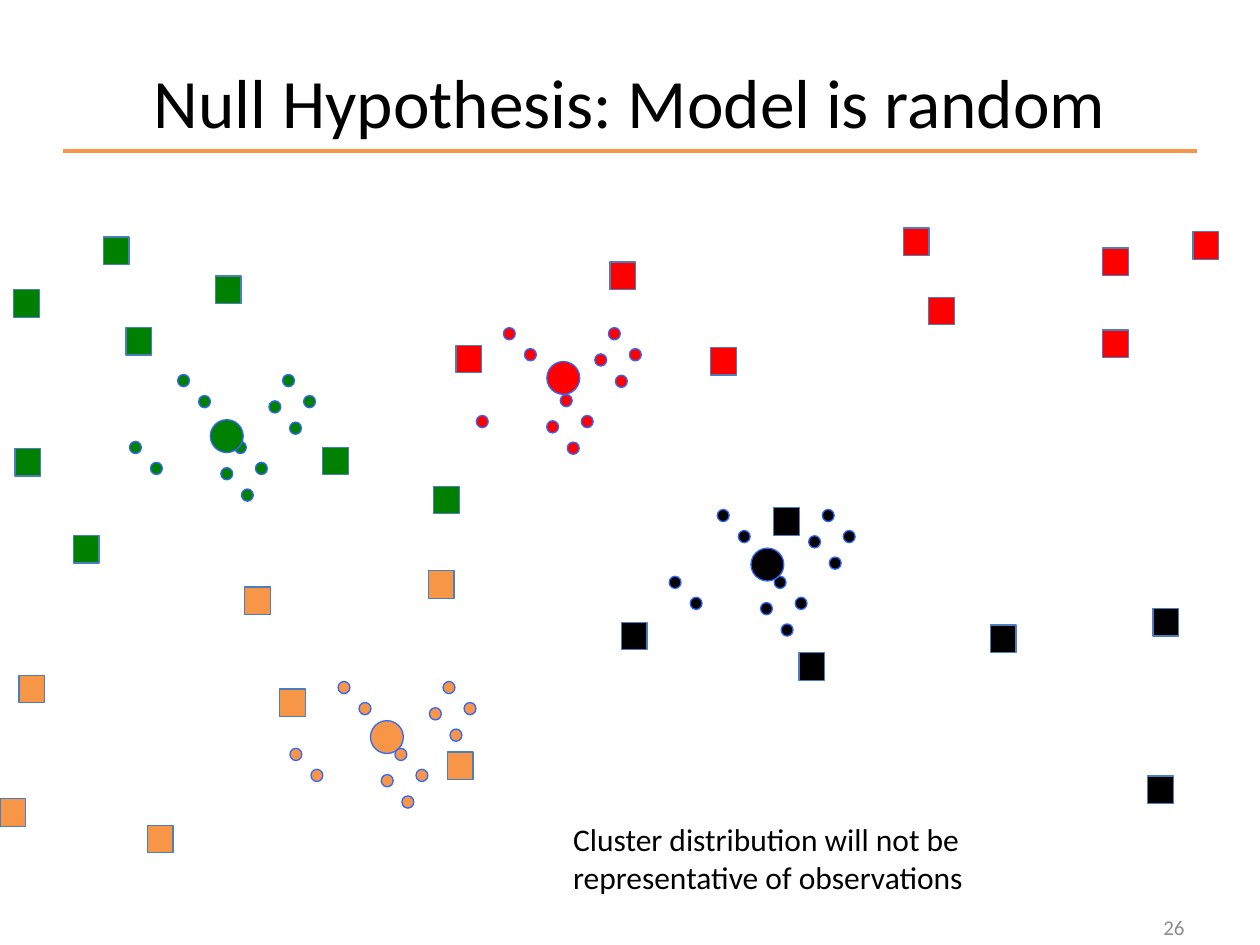
from lxml import etree
from pptx import Presentation
from pptx.dml.color import RGBColor
from pptx.enum.shapes import MSO_CONNECTOR, MSO_SHAPE
from pptx.enum.text import MSO_ANCHOR, PP_ALIGN
from pptx.oxml.ns import qn
from pptx.util import Pt

RECT, OVAL = MSO_SHAPE.RECTANGLE, MSO_SHAPE.OVAL
LEFT, CENTER, RIGHT = PP_ALIGN.LEFT, PP_ALIGN.CENTER, PP_ALIGN.RIGHT
TOP, MIDDLE = MSO_ANCHOR.TOP, MSO_ANCHOR.MIDDLE
ORANGE = "F79646"
DOT_LINE, SQUARE_LINE = "3366FF", "4B7EBC"
DOT, CENTROID, SQUARE = (6.8, 7), (18.8, 18.8), (14.7, 15.7)

# Each dot of the base pattern is repeated once, shifted up and to the right.
BASE_DOTS = [(52.2, 53.2), (0, 38.2), (60, 38.2), (64, 65.4), (12, 50.2), (72, 50.2)]
DOT_SHIFT = (27.5, -38.2)

# left_out holds pattern positions that have no dot.
CLUSTERS = [
    {"color": "008000", "origin": (74, 214), "centroid": (120.2, 239.8), "left_out": [],
     "squares": [(184.3, 255.6), (7.9, 165.6), (59, 135.4), (41.8, 306),
                 (8.6, 256.3), (247.7, 277.9), (72, 187.2), (123.1, 157.7)]},
    {"color": "000000", "origin": (382.4, 291.1), "centroid": (429.1, 313.2), "left_out": [],
     "squares": [(442.1, 290.2), (456.5, 373), (355, 355.7), (565.9, 357.1),
                 (658.8, 347.8), (655.9, 443.5)]},
    {"color": ORANGE, "origin": (165.7, 389.4), "centroid": (211.7, 411.8), "left_out": [],
     "squares": [(139.7, 335.5), (255.6, 429.8), (244.8, 326.2), (159.8, 393.8),
                 (10.8, 385.9), (84.2, 471.6), (0, 456.5)]},
    {"color": "FF0000", "origin": (260.2, 187.2), "centroid": (312.5, 206.6),
     "left_out": [(0, 38.2)],
     "squares": [(348.5, 149.8), (406.1, 198.7), (260.6, 197.3), (530.6, 169.9),
                 (630, 141.8), (630, 188.6), (516.2, 130.3), (681.8, 132.5)]},
]


def rgb(color):
    return RGBColor.from_string(color)


def add_mark(shapes, kind, at, size, fill, line):
    sp = shapes.add_shape(kind, *map(Pt, (*at, *size)))
    sp.shadow.inherit = False
    sp.fill.solid()
    sp.fill.fore_color.rgb = rgb(fill)
    sp.line.color.rgb = rgb(line)
    sp.line.width = Pt(0.75)


def add_text(s, box, text, size, color="000000", align=LEFT, anchor=TOP):
    tf = s.shapes.add_textbox(*map(Pt, box)).text_frame
    tf.word_wrap = True
    tf.vertical_anchor = anchor
    p = tf.paragraphs[0]
    p.alignment = align
    r = p.add_run()
    r.text = text
    for name, value in {"name": "Calibri", "size": Pt(size)}.items():
        setattr(r.font, name, value)
    r.font.color.rgb = rgb(color)


def add_title(s, box, text):
    """Title with a rule along the bottom of its box."""
    left, top, width, height = box
    rule_y = top + height
    rule = s.shapes.add_connector(
        MSO_CONNECTOR.STRAIGHT, *map(Pt, (left, rule_y, left + width, rule_y)))
    rule.line.color.rgb = rgb(ORANGE)
    rule.line.width = Pt(2)
    etree.SubElement(rule._element.spPr, qn("a:effectLst"))
    add_text(s, (left, top, width, height - 0.8), text, 39.6, align=CENTER, anchor=MIDDLE)


def add_cluster(s, origin, centroid, color, left_out):
    """Group of dots placed from origin, with a large centroid on top."""
    group = s.shapes.add_group_shape()
    x, y = origin
    shifted = [(dx + DOT_SHIFT[0], dy + DOT_SHIFT[1]) for dx, dy in BASE_DOTS]
    for dx, dy in BASE_DOTS + shifted:
        if (dx, dy) not in left_out:
            add_mark(group.shapes, OVAL, (x + dx, y + dy), DOT, color, DOT_LINE)
    add_mark(s.shapes, OVAL, centroid, CENTROID, color, DOT_LINE)


def main():
    prs = Presentation()
    prs.slide_width, prs.slide_height = Pt(720), Pt(540)
    s = prs.slides.add_slide(prs.slide_layouts[6])
    add_title(s, (36, 30.2, 648, 56.2), "Null Hypothesis: Model is random")
    add_text(s, (516, 519, 168, 21), "26", 12, "8C8C8C", RIGHT, MIDDLE)
    for c in CLUSTERS:
        add_cluster(s, c["origin"], c["centroid"], c["color"], c["left_out"])
    for c in CLUSTERS:
        for at in c["squares"]:
            add_mark(s.shapes, RECT, at, SQUARE, c["color"], SQUARE_LINE)
    add_text(s, (320.4, 465.1, 264, 51),
             "Cluster distribution will not be representative of observations", 18)
    prs.save("out.pptx")


if __name__ == "__main__":
    main()
